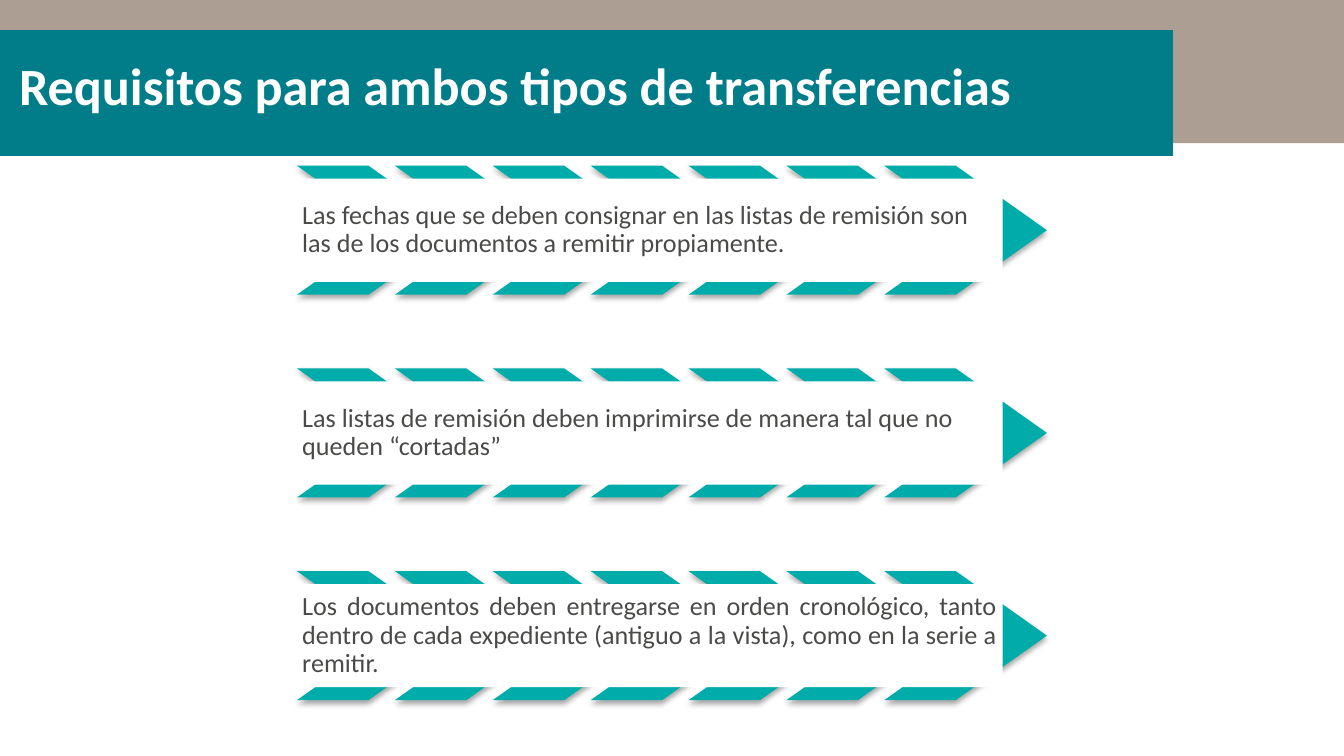
"""Builds the slide on requirements for both kinds of transfer."""
from lxml import etree
from pptx import Presentation
from pptx.dml.color import RGBColor as RGB
from pptx.enum.shapes import MSO_SHAPE as Shape
from pptx.enum.text import MSO_ANCHOR as Anchor, MSO_AUTO_SIZE as Fit, PP_ALIGN as Align
from pptx.oxml.ns import qn
from pptx.util import Pt


def block(kind, left, top, width, height, color):
    item = slide.shapes.add_shape(kind, Pt(left), Pt(top), Pt(width), Pt(height))
    item.shadow.inherit = False
    item.fill.solid()
    item.fill.fore_color.rgb = RGB.from_string(color)
    item.line.fill.background()
    return item


def write(para, text, size, color, bold=False):
    run = para.add_run()
    run.text = text
    run.font.name = "Calibri"
    run.font.size = Pt(size)
    run.font.bold = bold
    run.font.color.rgb = RGB.from_string(color)


deck = Presentation()
deck.slide_width, deck.slide_height = Pt(720), Pt(405)
slide = deck.slides.add_slide(deck.slide_layouts[5])

block(Shape.RECTANGLE, 0, 0, 720, 76.7, "AD9E93")
block(Shape.RECTANGLE, 0, 16.2, 628.4, 67.4, "007D89")

title = slide.shapes.title
title.left, title.top, title.width, title.height = Pt(-48.2), Pt(11.5), Pt(648), Pt(67.7)
frame = title.text_frame
frame.auto_size = Fit.NONE
frame.vertical_anchor = Anchor.MIDDLE
frame.paragraphs[0].alignment = Align.CENTER
write(frame.paragraphs[0], "Requisitos para ambos tipos de transferencias", 28, "FFFFFF", True)
slide.shapes._spTree.append(title._element)

rules = [
    ("Las fechas que se deben consignar en las listas de remisión son "
     "las de los documentos a remitir propiamente.", Align.LEFT),
    ("Las listas de remisión deben imprimirse de manera tal que no "
     "queden “cortadas”", Align.LEFT),
    ("Los documentos deben entregarse en orden cronológico, tanto "
     "dentro de cada expediente (antiguo a la vista), como en la serie a "
     "remitir.", Align.JUSTIFY),
]
left = 159.1
for row, (text, align) in enumerate(rules):
    top = 88.8 + row * 108.6
    for col in range(7):
        arrow = block(Shape.CHEVRON, left + col * 52.44, top, 87.1, 69.1, "00ACA9")
        arrow.adjustments[0] = 0.706
        glow = arrow._element.spPr.find(qn("a:effectLst"))
        shade = etree.SubElement(glow, qn("a:outerShdw"), blurRad=str(Pt(3.1)),
                                 dist=str(Pt(1.8)), dir="5400000", rotWithShape="0")
        tint = etree.SubElement(shade, qn("a:srgbClr"), val="000000")
        etree.SubElement(tint, qn("a:alpha"), val="35000")

    panel = block(Shape.RECTANGLE, left, top + 6.9, 378, 55.3, "FFFFFF")
    frame = panel.text_frame
    frame.word_wrap = True
    frame.vertical_anchor = Anchor.MIDDLE
    frame.margin_left = frame.margin_right = Pt(2.8)
    frame.margin_top = frame.margin_bottom = Pt(2.8)
    para = frame.paragraphs[0]
    para.alignment = align
    para.line_spacing = 0.9
    write(para, text, 14, "4A4A49")

deck.save("out.pptx")
